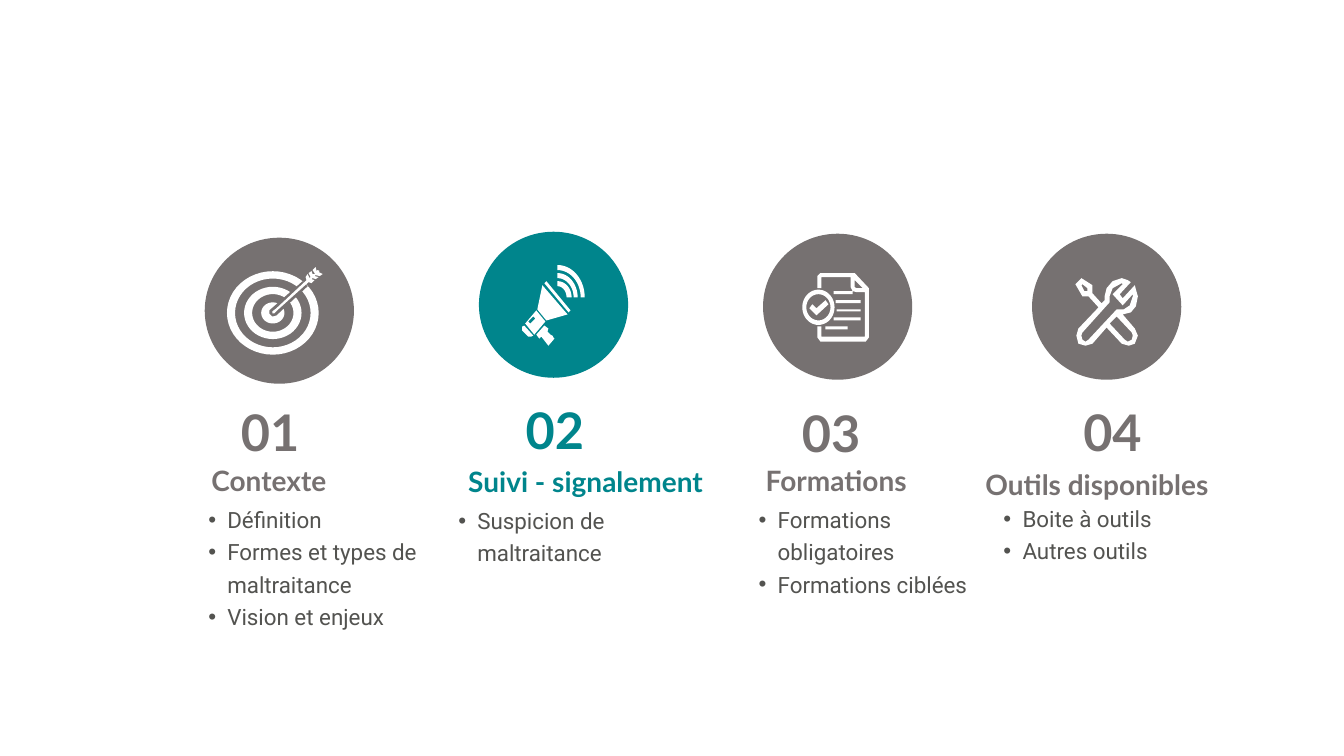
import math
import pptx
import pptx.dml.color
import pptx.enum.shapes
import pptx.enum.text
import pptx.util
from lxml import etree
from pptx.oxml.ns import qn
from pptx.util import Cm

theme = {
    "grey": pptx.dml.color.RGBColor.from_string("767171"),
    "teal": pptx.dml.color.RGBColor.from_string("00858C"),
    "body": pptx.dml.color.RGBColor.from_string("535350"),
    "white": pptx.dml.color.RGBColor.from_string("FFFFFF"),
    "heading_font": "Lato",
    "body_font": "Roboto",
    "number_size": pptx.util.Pt(36),
    "title_size": pptx.util.Pt(20),
    "list_size": pptx.util.Pt(16),
}


def arc(cx, cy, rx, ry, start=0, end=360):
    angles = [math.radians(start + (end - start) * i / 48) for i in range(49)]
    return [(cx + rx * math.cos(a), cy + ry * math.sin(a)) for a in angles]


def bar(left, top, right, bottom):
    return [(left, top), (right, top), (right, bottom), (left, bottom)]


target_rings = [arc(45.5, 45.5, r, r * 0.91) for r in (45.5, 37.5, 28.5, 20.5, 11.5)]
arrow_gap = [(42, 43), (75, 14), (80, 19), (49, 48), (45, 49), (42, 46)]
target_arrow = [
    (95, 7), (92, 9), (88, 8), (87, 9), (91, 10), (88, 12), (85, 11), (84, 12),
    (87, 13), (84, 16), (81, 15), (51, 42), (47, 46), (45, 46), (45, 44), (49, 41),
    (79, 13), (78, 10), (80, 7), (82, 11), (83, 10), (81, 6), (84, 4), (85, 7),
    (87, 7), (87, 6), (85, 3), (88, 0), (89, 4), (90, 3), (92, 4), (91, 5),
]
sound_waves = [
    arc(35, 32, *outer, -90, 0) + arc(35, 32, *inner, 0, -90)
    for outer, inner in (((14, 16), (9, 11)), ((20, 24), (16, 19)), ((27, 32), (23, 27)))
]
megaphone = [
    [(0, 61), (0, 65), (6, 71), (9, 71), (11, 70), (2, 60)],
    [(23, 56), (12, 69), (3, 58), (14, 45)],
    [(13, 53), (11, 51), (6, 56), (8, 58)],
    [(22, 18), (46, 47), (48, 45), (24, 16)],
    [(15, 44), (24, 55), (45, 49), (20, 20)],
    [(31, 72), (30, 70), (28, 69), (25, 66), (26, 63), (22, 60), (14, 69),
     (17, 73), (19, 71), (26, 80), (32, 73)],
]
certificate = [
    [(26, 31), (14, 42), (7, 35), (10, 31), (14, 35), (23, 27)],
    arc(16, 34, 16, 17.5),
    arc(16, 34, 12, 13),
    bar(31, 18, 50, 21),
    bar(33, 27, 58, 30),
    bar(34, 36, 58, 38),
    bar(31, 44, 58, 47),
    bar(23, 53, 45, 56),
    [(66, 17), (66, 64), (63, 68), (18, 68), (15, 64), (15, 53), (19, 53), (19, 63),
     (62, 63), (62, 19), (54, 19), (50, 18), (48, 14), (48, 4), (19, 4), (19, 15),
     (15, 15), (15, 3), (18, 0), (50, 0), (52, 0), (66, 15)],
    [(60, 15), (52, 7), (52, 14), (54, 15)],
]
crossed_tools = [
    [(47, 36), (55, 34), (60, 28), (62, 18), (60, 11), (59, 7), (47, 20), (44, 16),
     (55, 4), (52, 2), (46, 0), (37, 3), (31, 10), (29, 18), (29, 22), (26, 25),
     (17, 15), (17, 7), (6, 0), (0, 6), (7, 18), (13, 18), (23, 29), (3, 50),
     (1, 57), (3, 65), (10, 67), (17, 65), (31, 49), (46, 65), (53, 67), (59, 65),
     (62, 57), (59, 50)],
    [(9, 13), (6, 7), (7, 6), (12, 10), (12, 13)],
    [(13, 61), (10, 63), (7, 61), (6, 57), (7, 54), (34, 24), (34, 18), (37, 10),
     (46, 5), (47, 6), (37, 16), (47, 27), (57, 16), (57, 18), (54, 27), (48, 31),
     (41, 31)],
    [(56, 61), (52, 63), (49, 61), (34, 45), (41, 38), (56, 54), (57, 57)],
]

chapters = [
    {"number": "01", "title": "Contexte", "color": "grey",
     "points": ["Définition", "Formes et types de maltraitance", "Vision et enjeux"],
     "disc": (5.16, 5.99), "icon": (5.72, 6.73), "number_at": (5.82, 9.68),
     "title_at": (3.89, 11.38, 5.77), "list_at": (5, 12.5, 5.77, 3.45),
     "layers": [("white", target_rings), ("grey", [arrow_gap]), ("white", [target_arrow])]},
    {"number": "02", "title": "Suivi - signalement", "color": "teal",
     "points": ["Suspicion de maltraitance"],
     "disc": (12.07, 5.84), "icon": (13.16, 6.68), "number_at": (13, 9.63),
     "title_at": (10.39, 11.4, 8.74), "list_at": (11.3, 12.52, 6.93, 1.83),
     "layers": [("white", sound_waves + megaphone)]},
    {"number": "03", "title": "Formations", "color": "grey",
     "points": ["Formations obligatoires", "Formations ciblées"],
     "disc": (19.23, 5.89), "icon": (20.22, 6.88), "number_at": (19.96, 9.7),
     "title_at": (18.19, 11.38, 5.77), "list_at": (18.87, 12.5, 6.17, 2.64),
     "layers": [("white", certificate)]},
    {"number": "04", "title": "Outils disponibles", "color": "grey",
     "points": ["Boite à outils", "Autres outils"],
     "disc": (26.01, 5.89), "icon": (27.1, 7.01), "number_at": (27.05, 9.68),
     "title_at": (24.28, 11.48, 6.73), "list_at": (25.04, 12.47, 5.16, 1.83),
     "layers": [("white", crossed_tools)]},
]

deck = pptx.Presentation()
deck.slide_width, deck.slide_height = Cm(33.87), Cm(19.05)
slide = deck.slides.add_slide(deck.slide_layouts[6])
icon_unit = Cm(2.54) / 100
left_align, center_align = pptx.enum.text.PP_ALIGN.LEFT, pptx.enum.text.PP_ALIGN.CENTER

for chapter in chapters:
    disc = slide.shapes.add_shape(
        pptx.enum.shapes.MSO_SHAPE.OVAL, *map(Cm, chapter["disc"]), Cm(3.76), Cm(3.68))
    painted = [(disc, chapter["color"])]
    for color, outlines in chapter["layers"]:
        scaled = [[(x * icon_unit, y * icon_unit) for x, y in line] for line in outlines]
        pen = slide.shapes.build_freeform(*scaled[0][0])
        for outline in scaled:
            pen.move_to(*outline[0])
            pen.add_line_segments(outline[1:], close=True)
        painted.append((pen.convert_to_shape(*map(Cm, chapter["icon"])), color))
    for part, color in painted:
        part.shadow.inherit = False
        part.fill.solid()
        part.fill.fore_color.rgb = theme[color]
        part.line.fill.background()

    heading = (theme["heading_font"], theme[chapter["color"]], True)
    body = (theme["body_font"], theme["body"], False)
    texts = [
        ([chapter["title"]], (*chapter["title_at"], 1.19), theme["title_size"], heading, center_align),
        ([chapter["number"]], (*chapter["number_at"], 2.18, 1.93), theme["number_size"], heading, left_align),
        (chapter["points"], chapter["list_at"], theme["list_size"], body, left_align),
    ]
    for lines, place, size, (font_name, color, bold), align in texts:
        frame = slide.shapes.add_textbox(*map(Cm, place)).text_frame
        frame.word_wrap = True
        frame.text = "\n".join(lines)
        for paragraph in frame.paragraphs:
            if lines is chapter["points"]:
                properties = paragraph._p.get_or_add_pPr()
                properties.set("marL", str(Cm(0.48)))
                properties.set("indent", str(-Cm(0.48)))
                etree.SubElement(properties, qn("a:buFont"), typeface="Arial")
                etree.SubElement(properties, qn("a:buChar"), char="•")
            paragraph.alignment = align
            paragraph.line_spacing = 1.2
            font = paragraph.runs[0].font
            font.name, font.size, font.bold = font_name, size, bold
            font.color.rgb = color

deck.save("out.pptx")
